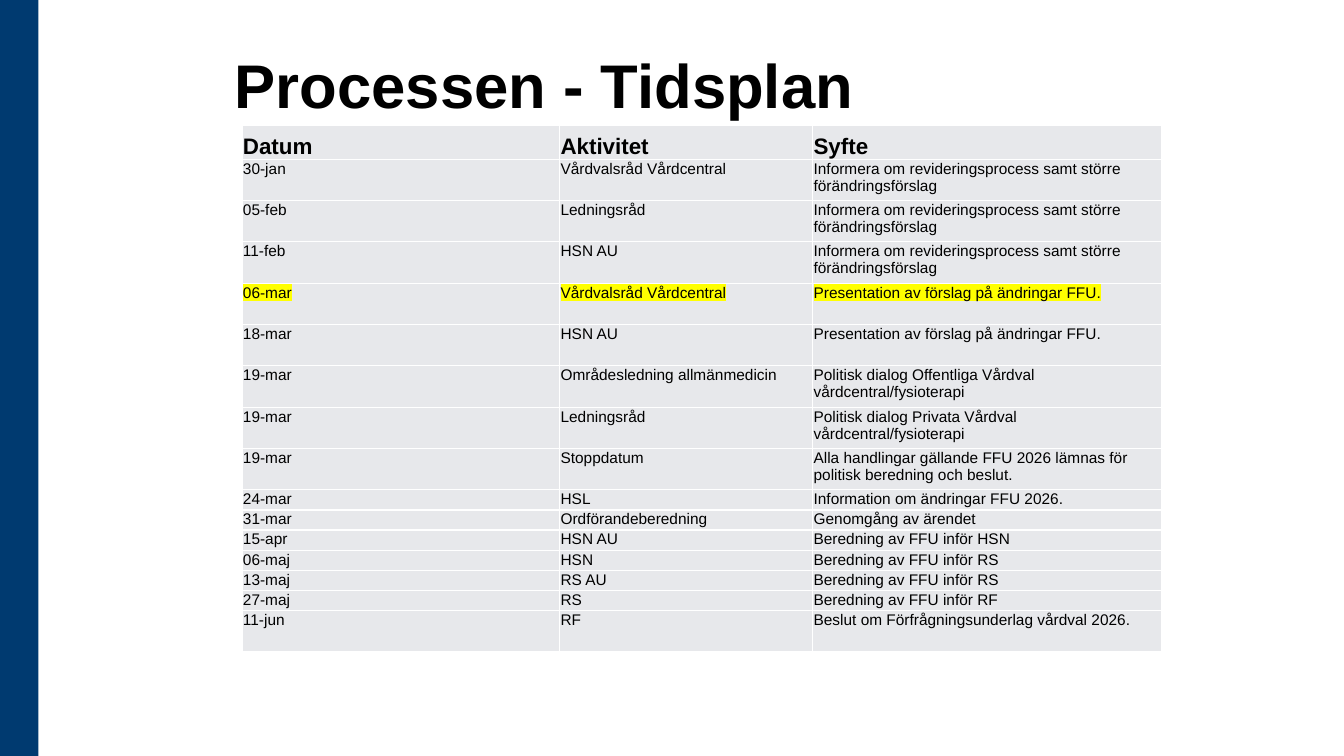
from lxml.etree import SubElement
from pptx import Presentation
from pptx.dml.color import RGBColor
from pptx.enum.shapes import MSO_SHAPE
from pptx.enum.text import MSO_ANCHOR, MSO_AUTO_SIZE, PP_ALIGN
from pptx.oxml import parse_xml
from pptx.oxml.ns import nsdecls, qn
from pptx.util import Inches, Pt

# Content
TITLE = "Processen - Tidsplan"
HEADER = ("Datum", "Aktivitet", "Syfte")
INFORM = "Informera om revideringsprocess samt större förändringsförslag"
PRESENT = "Presentation av förslag på ändringar FFU."
ACTIVITIES = [
    ("30-jan", "Vårdvalsråd Vårdcentral", INFORM),
    ("05-feb", "Ledningsråd", INFORM),
    ("11-feb", "HSN AU", INFORM),
    ("06-mar", "Vårdvalsråd Vårdcentral", PRESENT),
    ("18-mar", "HSN AU", PRESENT),
    ("19-mar", "Områdesledning allmänmedicin",
     "Politisk dialog Offentliga Vårdval vårdcentral/fysioterapi"),
    ("19-mar", "Ledningsråd",
     "Politisk dialog Privata Vårdval vårdcentral/fysioterapi"),
    ("19-mar", "Stoppdatum",
     "Alla handlingar gällande FFU 2026 lämnas för politisk beredning och beslut."),
    ("24-mar", "HSL", "Information om ändringar FFU 2026."),
    ("31-mar", "Ordförandeberedning", "Genomgång av ärendet"),
    ("15-apr", "HSN AU", "Beredning av FFU inför HSN"),
    ("06-maj", "HSN", "Beredning av FFU inför RS"),
    ("13-maj", "RS AU", "Beredning av FFU inför RS"),
    ("27-maj", "RS", "Beredning av FFU inför RF"),
    ("11-jun", "RF", "Beslut om Förfrågningsunderlag vårdval 2026."),
]
HIGHLIGHTED_DATE = "06-mar"

# Style and measures in inches
COLORS = {"band": "003A70", "cell": "E7E8EB", "border": "FFFFFF",
          "text": "000000", "highlight": "FFFF00"}
FONT = "Arial"
COLUMN_WIDTHS = (3.15, 2.51, 3.46)
TALL_ROW, SHORT_ROW = 0.41, 0.2
ROW_HEIGHTS = [0.34] + [TALL_ROW] * 8 + [SHORT_ROW] * 6 + [TALL_ROW]


def format_font(font, size, bold):
    font.name = FONT
    font.size = Pt(size)
    font.bold = bold
    font.color.rgb = RGBColor.from_string(COLORS["text"])


def highlight(run):
    mark = parse_xml(f'<a:highlight {nsdecls("a")}>'
                     f'<a:srgbClr val="{COLORS["highlight"]}"/></a:highlight>')
    run.font._element.find(qn("a:solidFill")).addnext(mark)


def add_borders(cell):
    properties = cell._tc.get_or_add_tcPr()
    for position, side in enumerate(("lnL", "lnR", "lnT", "lnB")):
        line = parse_xml(f'<a:{side} {nsdecls("a")} w="{Pt(1)}"/>')
        fill = SubElement(line, qn("a:solidFill"))
        SubElement(fill, qn("a:srgbClr"), val=COLORS["border"])
        properties.insert(position, line)


def fill_cell(cell, text, is_header, is_marked):
    cell.margin_left = cell.margin_right = cell.margin_top = Inches(0.01)
    cell.margin_bottom = 0
    cell.vertical_anchor = MSO_ANCHOR.BOTTOM if is_header else MSO_ANCHOR.TOP
    cell.fill.solid()
    cell.fill.fore_color.rgb = RGBColor.from_string(COLORS["cell"])
    add_borders(cell)
    cell.text_frame.text = text
    run = cell.text_frame.paragraphs[0].runs[0]
    format_font(run.font, 16 if is_header else 11, is_header)
    if is_marked:
        highlight(run)


def add_band(slide, height):
    band = slide.shapes.add_shape(MSO_SHAPE.RECTANGLE, 0, 0, Inches(0.38), height)
    band.shadow.inherit = False
    band.fill.solid()
    band.fill.fore_color.rgb = RGBColor.from_string(COLORS["band"])
    band.line.fill.background()


def add_title(slide):
    title = slide.shapes.title
    title.left, title.top = Inches(2.23), Inches(0.35)
    title.width, title.height = Inches(7.87), Inches(0.4)
    frame = title.text_frame
    frame.text = TITLE
    frame.word_wrap = True
    frame.auto_size = MSO_AUTO_SIZE.NONE
    frame.vertical_anchor = MSO_ANCHOR.TOP
    frame.margin_top = Inches(0.12)
    paragraph = frame.paragraphs[0]
    paragraph.alignment = PP_ALIGN.LEFT
    format_font(paragraph.runs[0].font, 44, True)


def add_schedule(slide):
    rows = [HEADER] + ACTIVITIES
    table = slide.shapes.add_table(
        len(rows), len(HEADER), Inches(2.4), Inches(1.24),
        Inches(sum(COLUMN_WIDTHS)), Inches(sum(ROW_HEIGHTS))).table
    for column, width in zip(table.columns, COLUMN_WIDTHS):
        column.width = Inches(width)
    for row, height, texts in zip(table.rows, ROW_HEIGHTS, rows):
        row.height = Inches(height)
        for cell, text in zip(row.cells, texts):
            fill_cell(cell, text, texts is HEADER, texts[0] == HIGHLIGHTED_DATE)


def main():
    presentation = Presentation()
    presentation.slide_width = Inches(13.33)
    presentation.slide_height = Inches(7.5)
    slide = presentation.slides.add_slide(presentation.slide_layouts[5])
    add_band(slide, presentation.slide_height)
    add_schedule(slide)
    add_title(slide)
    presentation.save("out.pptx")


if __name__ == "__main__":
    main()
